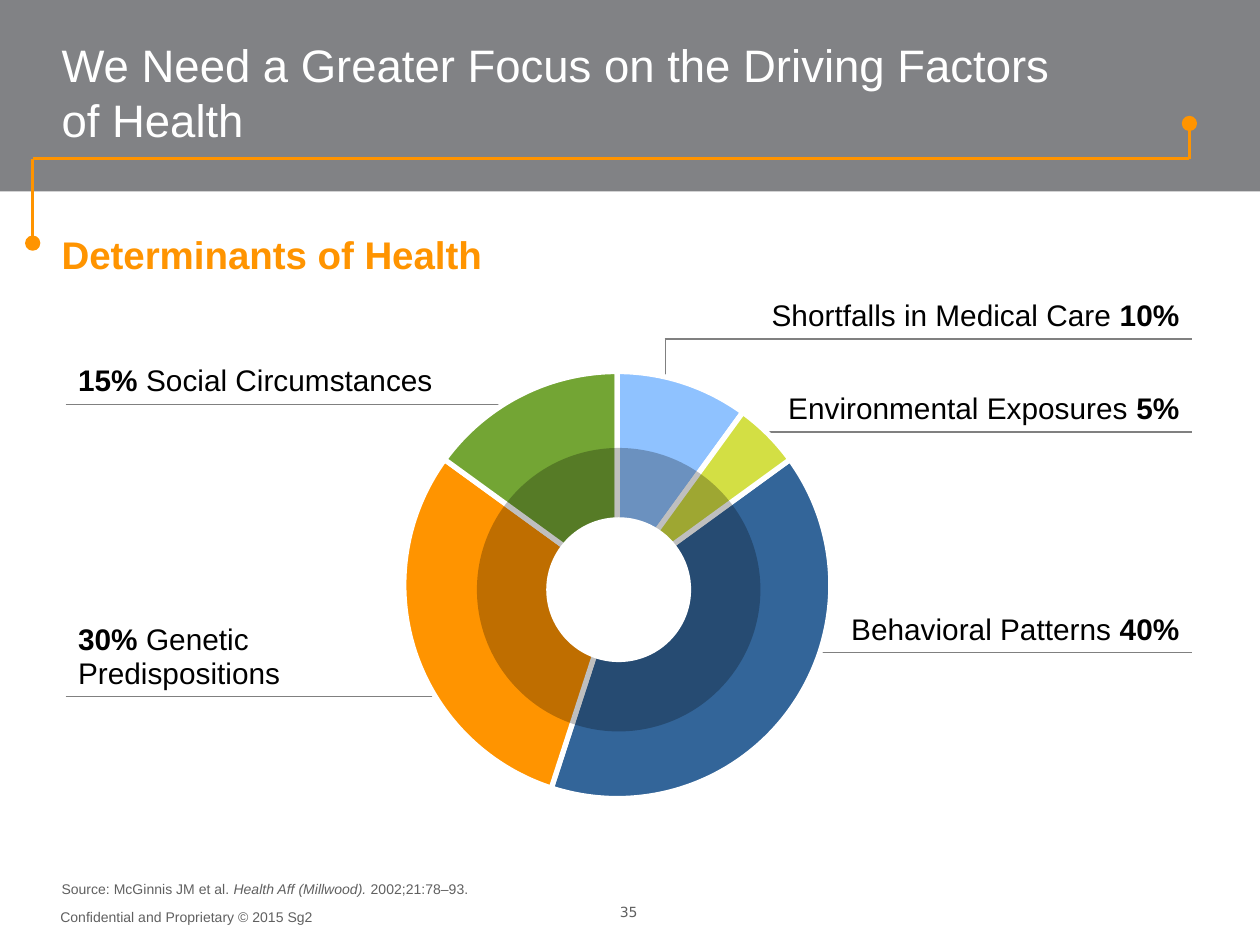
from lxml import etree
from pptx import Presentation
from pptx.chart.data import CategoryChartData
from pptx.dml.color import RGBColor
from pptx.enum.chart import XL_CHART_TYPE
from pptx.enum.shapes import MSO_CONNECTOR, MSO_SHAPE
from pptx.enum.text import MSO_ANCHOR, PP_ALIGN
from pptx.oxml import parse_xml
from pptx.oxml.ns import nsdecls, qn
from pptx.util import Inches, Pt

PIE = XL_CHART_TYPE.PIE
STRAIGHT = MSO_CONNECTOR.STRAIGHT
RECT, OVAL = MSO_SHAPE.RECTANGLE, MSO_SHAPE.OVAL
TOP, BOTTOM = MSO_ANCHOR.TOP, MSO_ANCHOR.BOTTOM
LEFT, CENTER, RIGHT = PP_ALIGN.LEFT, PP_ALIGN.CENTER, PP_ALIGN.RIGHT

BLACK = RGBColor(0x00, 0x00, 0x00)
WHITE = RGBColor(0xFF, 0xFF, 0xFF)
BAND = RGBColor(0x81, 0x82, 0x85)
RULE = RGBColor(0x80, 0x80, 0x80)
NOTE = RGBColor(0x60, 0x60, 0x60)
ORANGE = RGBColor(0xFF, 0x94, 0x00)
NAVY = RGBColor(0x33, 0x65, 0x99)
GREEN = RGBColor(0x73, 0xA5, 0x34)
SKY = RGBColor(0x8F, 0xC2, 0xFF)
LIME = RGBColor(0xD3, 0xDF, 0x44)

SHARES = [("Behavioral Patterns", 40, NAVY), ("Genetic Predispositions", 30, ORANGE),
          ("Social Circumstances", 15, GREEN), ("Shortfalls in Medical Care", 10, SKY),
          ("Environmental Exposures", 5, LIME)]


def inch(*nums):
    return [Inches(n) for n in nums]


def style(font, size, color, name="Arial"):
    font.name, font.size, font.color.rgb = name, Pt(size), color


def add_text(slide, box, text, size, color, name="Arial", anchor=TOP, align=LEFT, pad=0.05):
    frame = slide.shapes.add_textbox(*inch(*box)).text_frame
    frame.word_wrap = True
    frame.vertical_anchor = anchor
    frame.margin_top = frame.margin_bottom = Inches(pad)
    para = frame.paragraphs[0]
    para.alignment = align
    style(para.font, size, color, name)
    if text:
        para.add_run().text = text
    return para


def add_solid(slide, kind, box, color):
    shape = slide.shapes.add_shape(kind, *inch(*box))
    shape.shadow.inherit = False
    shape.fill.solid()
    shape.fill.fore_color.rgb = color
    shape.line.fill.background()
    return shape


def add_line(slide, *ends):
    line = slide.shapes.add_connector(STRAIGHT, *inch(*ends))
    line.line.color.rgb = ORANGE
    line.line.width = Pt(1.5)
    etree.SubElement(line._element.spPr, qn("a:effectLst"))


def add_dot(slide, x, y):
    dot = add_solid(slide, OVAL, (x - 0.05, y - 0.05, 0.1, 0.1), ORANGE)
    dot.line.color.rgb = ORANGE
    dot.line.width = Pt(1.5)


def add_header(slide, box):
    x, y, wide, high = box
    add_solid(slide, RECT, box, BAND)
    start, end, level = x + 0.26, x + wide - 0.56, y + 1.26
    add_line(slide, end, level, end, y + 0.98)
    add_line(slide, start, level, end, level)
    add_line(slide, start, level, start, y + 1.93)
    add_dot(slide, end, y + 0.98)
    add_dot(slide, start, y + 1.93)
    add_text(slide, (x + 0.39, y + 0.16, 8.28, 1.05),
             "We Need a Greater Focus on the Driving Factors of Health", 26, WHITE, anchor=BOTTOM)


def add_heading(slide, box):
    para = add_text(slide, box, "Determinants of Health", 22, ORANGE)
    para.font.bold = True
    para.line_spacing = 1.1


def set_edges(cell, sides):
    cell.fill.background()
    props = cell._tc.get_or_add_tcPr()
    for spot, side in enumerate("LRTB"):
        paint = f'<a:solidFill><a:srgbClr val="{RULE}"/></a:solidFill>' if side in sides else "<a:noFill/>"
        props.insert(spot, parse_xml(f'<a:ln{side} {nsdecls("a")} w="12700">{paint}</a:ln{side}>'))


def add_labels(slide, box, cols, rows, edges, labels, align):
    table = slide.shapes.add_table(len(rows), len(cols), *inch(*box)).table
    table.first_row = table.horz_banding = False
    for col, wide in zip(table.columns, cols):
        col.width = Inches(wide)
    for row, high in zip(table.rows, rows):
        row.height = Inches(high)
    for r in range(len(rows)):
        for c in range(len(cols)):
            set_edges(table.cell(r, c), edges.get((r, c), ""))
    for spot, parts in labels.items():
        cell = table.cell(*spot)
        cell.vertical_anchor = BOTTOM
        para = cell.text_frame.paragraphs[0]
        para.alignment = align
        style(para.font, 17, BLACK)
        for part in parts:
            if part == "\n":
                para.add_line_break()
                continue
            run = para.add_run()
            run.text = part
            run.font.bold = "%" in part
    return table


def add_right(slide, box):
    edges = {(0, 0): "B", (0, 1): "B", (1, 0): "LT", (1, 1): "TB",
             (2, 0): "B", (2, 1): "TB", (3, 0): "T", (3, 1): "T"}
    labels = {(0, 0): ["Shortfalls in Medical Care ", "10%"],
              (1, 1): ["Environmental Exposures ", "5%"],
              (2, 1): ["Behavioral Patterns ", "40%"]}
    table = add_labels(slide, box, (0.68, 3.5), (0.51, 0.74, 1.75, 0.46), edges, labels, RIGHT)
    table.cell(0, 0).merge(table.cell(0, 1))
    table.cell(0, 0).margin_left = 0


def add_left(slide, box):
    edges = {(r, c): "B" if r == 0 else "TB" if r == 1 else "T"
             for r in range(3) for c in range(2)}
    labels = {(0, 0): ["15% ", "Social Circumstances"],
              (1, 0): ["30% ", "Genetic", "\n", "Predispositions"]}
    add_labels(slide, box, (3.05, 0.5, 0.24), (0.89, 2.32, 0.55), edges, labels, LEFT)


def add_ring(slide, box):
    data = CategoryChartData()
    data.categories = [name for name, _, _ in SHARES]
    data.add_series("Share of health", [value for _, value, _ in SHARES])
    chart = slide.shapes.add_chart(PIE, *inch(*box), data).chart
    chart.has_legend = chart.has_title = False
    style(chart.font, 18, BLACK)
    chart.font.bold = True
    plot = chart.plots[0]
    plot.vary_by_categories = True
    for spot, (_, _, color) in enumerate(SHARES):
        form = plot.series[0].points[spot].format
        form.fill.solid()
        form.fill.fore_color.rgb = color
        form.line.color.rgb = WHITE
        form.line.width = Pt(3)
    pie = chart._chartSpace.find(".//" + qn("c:pieChart"))
    angle = pie.find(qn("c:firstSliceAng"))
    if angle is None:
        angle = etree.SubElement(pie, qn("c:firstSliceAng"))
    angle.set("val", "54")
    area = pie.getparent()
    old = area.find(qn("c:layout"))
    if old is not None:
        area.remove(old)
    keys = [("layoutTarget", "inner"), ("xMode", "edge"), ("yMode", "edge"),
            ("x", 0.25), ("y", 0.19), ("w", 0.43), ("h", 0.75)]
    inner = "".join(f'<c:{key} val="{val}"/>' for key, val in keys)
    area.insert(0, parse_xml(
        f'<c:layout {nsdecls("c")}><c:manualLayout>{inner}</c:manualLayout></c:layout>'))

    x, y = box[0] + 3.73, box[1] + 2.59
    for size, color in ((2.25, BLACK), (1.15, WHITE)):
        disc = add_solid(slide, OVAL, (x - size / 2, y - size / 2, size, size), color)
        if color == BLACK:
            tint = disc._element.spPr.find(".//" + qn("a:srgbClr"))
            etree.SubElement(tint, qn("a:alpha")).set("val", "25000")


def add_footer(slide, box):
    x, y, wide, _ = box
    source = add_text(slide, (x + 0.01, y, 6.73, 0.24), "", 8, NOTE)
    for part in ("Source: McGinnis JM et al. ", "Health Aff (Millwood). ", "2002;21:78–93."):
        run = source.add_run()
        run.text = part
        run.font.italic = part.startswith("Health")
    add_text(slide, (x, y + 0.13, 4.22, 0.34), "Confidential and Proprietary © 2015 Sg2",
             8, NOTE, anchor=BOTTOM, pad=0.1)
    add_text(slide, (x + wide / 2 - 0.2, y + 0.18, 0.4, 0.24), "35", 8, NOTE, "DejaVu Sans", align=CENTER)


def main():
    deck = Presentation()
    deck.slide_width, deck.slide_height = inch(10, 7.5)
    slide = deck.slides.add_slide(deck.slide_layouts[6])
    add_header(slide, (0, 0, 10, 1.52))
    add_right(slide, (5.28, 2.18, 4.18, 3.46))
    add_left(slide, (0.52, 2.32, 3.79, 3.76))
    add_heading(slide, (0.39, 1.75, 9.08, 0.48))
    add_ring(slide, (1.18, 2.09, 8, 4.52))
    add_footer(slide, (0.38, 6.94, 9.22, 0.47))
    deck.save("out.pptx")


if __name__ == "__main__":
    main()
